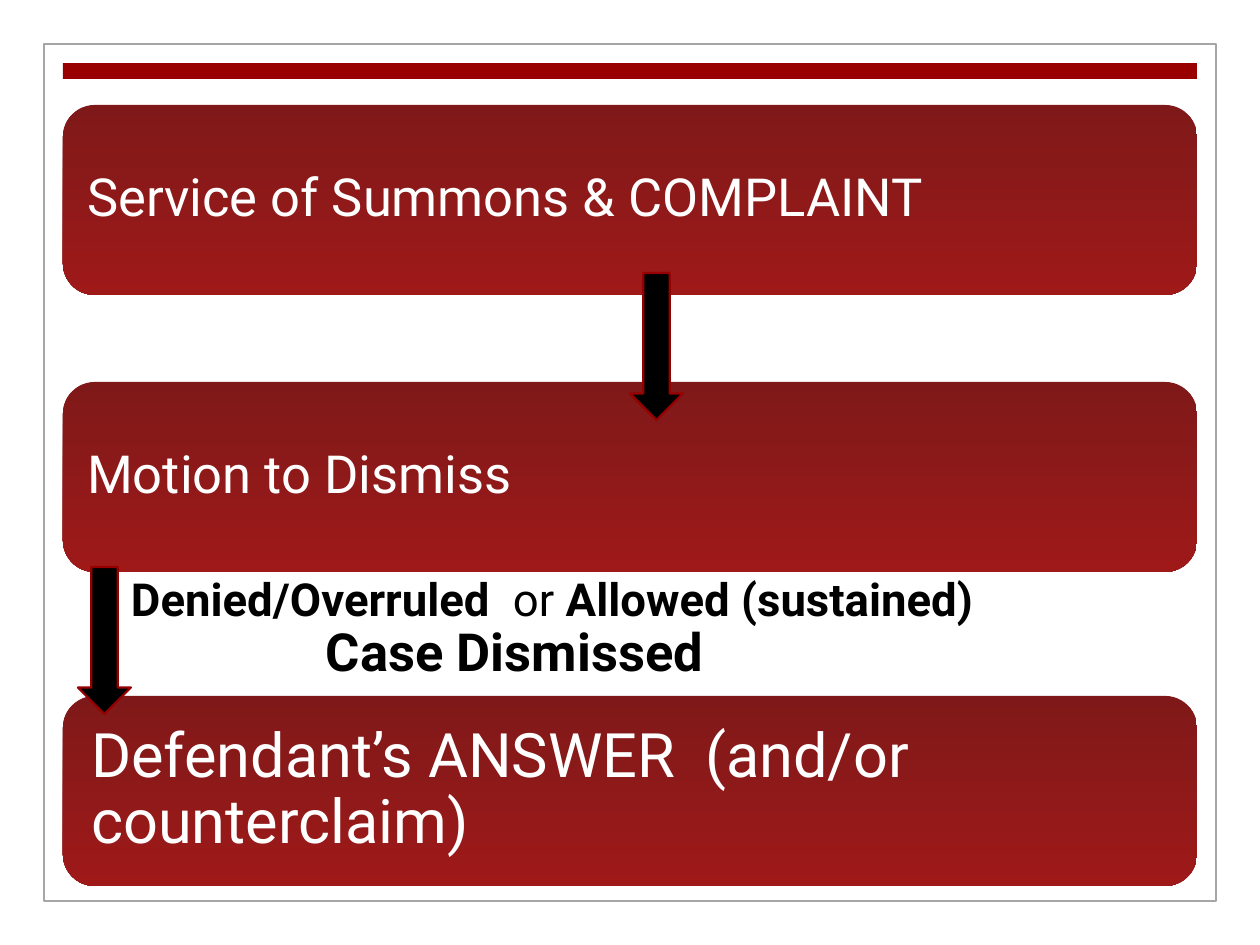
from lxml.etree import SubElement
from pptx import Presentation
from pptx.dml.color import RGBColor
from pptx.enum.shapes import MSO_SHAPE
from pptx.enum.text import MSO_ANCHOR, PP_ALIGN
from pptx.oxml.ns import qn
from pptx.util import Pt

# Content: stages as (top, text, type size, text inset)
STAGES = [
    (105, "Service of Summons & COMPLAINT", "stage", 15),
    (382, "Motion to Dismiss", "stage", 15),
    (696, "Defendant’s ANSWER  (and/or counterclaim)", "answer", 19),
]
# Rulings as (left indent, spans of (text, type size, bold))
RULINGS = [
    (0, [("Denied/Overruled  ", "ruling", True), ("or ", "ruling", False),
         ("Allowed (sustained)", "ruling", True)]),
    (195, [("Case Dismissed", "stage", True)]),
]
ARROWS = [(630, 273), (78, 567)]

# Theme and layout, lengths in px
THEME = {
    "font": "Roboto",
    "sizes": {"ruling": 26, "stage": 30, "answer": 35},
    "colors": {"frame": "A6A6A6", "bar": "990000", "edge": "960000",
               "light": "FFFFFF", "dark": "000000"},
    "gradient": ("720000", "950000"),
    "opacity": 90,
}
PAGE = (1260, 945)
FRAME = (44, 44, 1172, 857)
LEFT, WIDTH = 63, 1134
BAR_TOP, BAR_HEIGHT = 63, 16
STAGE_HEIGHT = 190
RULING_BOX = (LEFT, 572, WIDTH, 117)
ARROW_SIZE = (53, 147)
SCALE = 914400 / 126


def px(length):
    return round(length * SCALE)


def color(name):
    return RGBColor.from_string(THEME["colors"][name])


def apply(target, values):
    for name, value in values.items():
        setattr(target, name, value)


def add_box(page, kind, area, fill=None, line=None, line_width=1):
    box = page.shapes.add_shape(kind, *map(px, area))
    box.shadow.inherit = False
    if fill:
        box.fill.solid()
        box.fill.fore_color.rgb = color(fill)
    else:
        box.fill.background()
    if line:
        box.line.color.rgb = color(line)
        box.line.width = Pt(line_width)
    else:
        box.line.fill.background()
    return box


def shade(box):
    box.fill.gradient()
    box.fill.gradient_angle = 270
    for stop, value in zip(box.fill.gradient_stops, THEME["gradient"]):
        stop.color.rgb = RGBColor.from_string(value)
    for value in box.fill._xPr.iter(qn("a:srgbClr")):
        SubElement(value, qn("a:alpha"), val=str(THEME["opacity"] * 1000))


def format_frame(frame, anchor, left, top, right, bottom):
    apply(frame, {"word_wrap": True, "vertical_anchor": anchor,
                  "margin_left": px(left), "margin_top": px(top),
                  "margin_right": px(right), "margin_bottom": px(bottom)})


def write(para, spans, ink):
    apply(para, {"alignment": PP_ALIGN.LEFT, "line_spacing": 0.9})
    for text, size, bold in spans:
        span = para.add_run()
        span.text = text
        apply(span.font, {"name": THEME["font"], "bold": bold,
                          "size": Pt(THEME["sizes"][size])})
        span.font.color.rgb = color(ink)


deck = Presentation()
deck.slide_width, deck.slide_height = map(px, PAGE)
page = deck.slides.add_slide(deck.slide_layouts[6])

# Frame and top bar
add_box(page, MSO_SHAPE.RECTANGLE, FRAME, line="frame")
add_box(page, MSO_SHAPE.RECTANGLE, (LEFT, BAR_TOP, WIDTH, BAR_HEIGHT), fill="bar")

# Stages
for top, text, size, inset in STAGES:
    box = add_box(page, MSO_SHAPE.ROUNDED_RECTANGLE, (LEFT, top, WIDTH, STAGE_HEIGHT))
    shade(box)
    format_frame(box.text_frame, MSO_ANCHOR.MIDDLE, *[inset] * 4)
    write(box.text_frame.paragraphs[0], [(text, size, False)], "light")

# Rulings on the motion
frame = page.shapes.add_textbox(*map(px, RULING_BOX)).text_frame
format_frame(frame, MSO_ANCHOR.TOP, 68, 5, 25, 5)
for index, (indent, spans) in enumerate(RULINGS):
    para = frame.add_paragraph() if index else frame.paragraphs[0]
    para._p.get_or_add_pPr().set("marL", str(px(indent)))
    write(para, spans, "dark")

# Arrows between stages
for left, top in ARROWS:
    add_box(page, MSO_SHAPE.DOWN_ARROW, (left, top, *ARROW_SIZE),
            fill="dark", line="edge", line_width=1.25)

deck.save("out.pptx")
